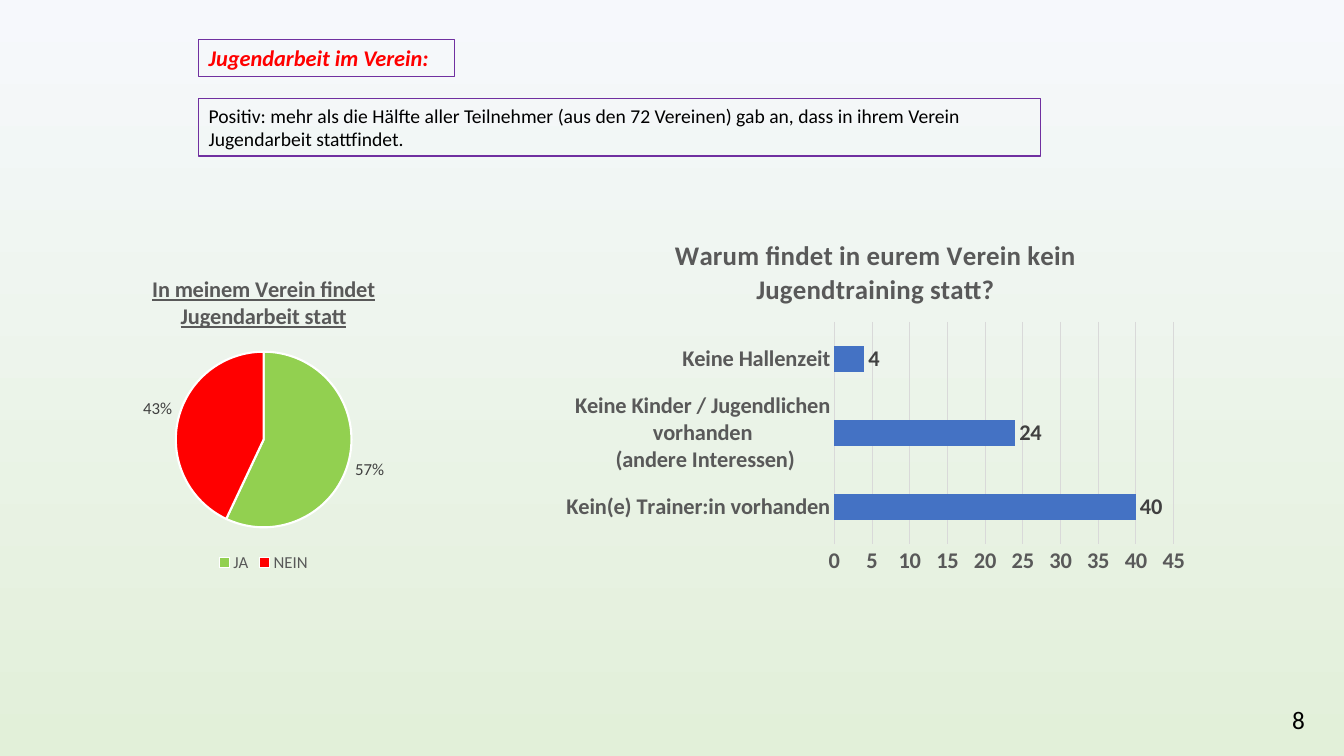
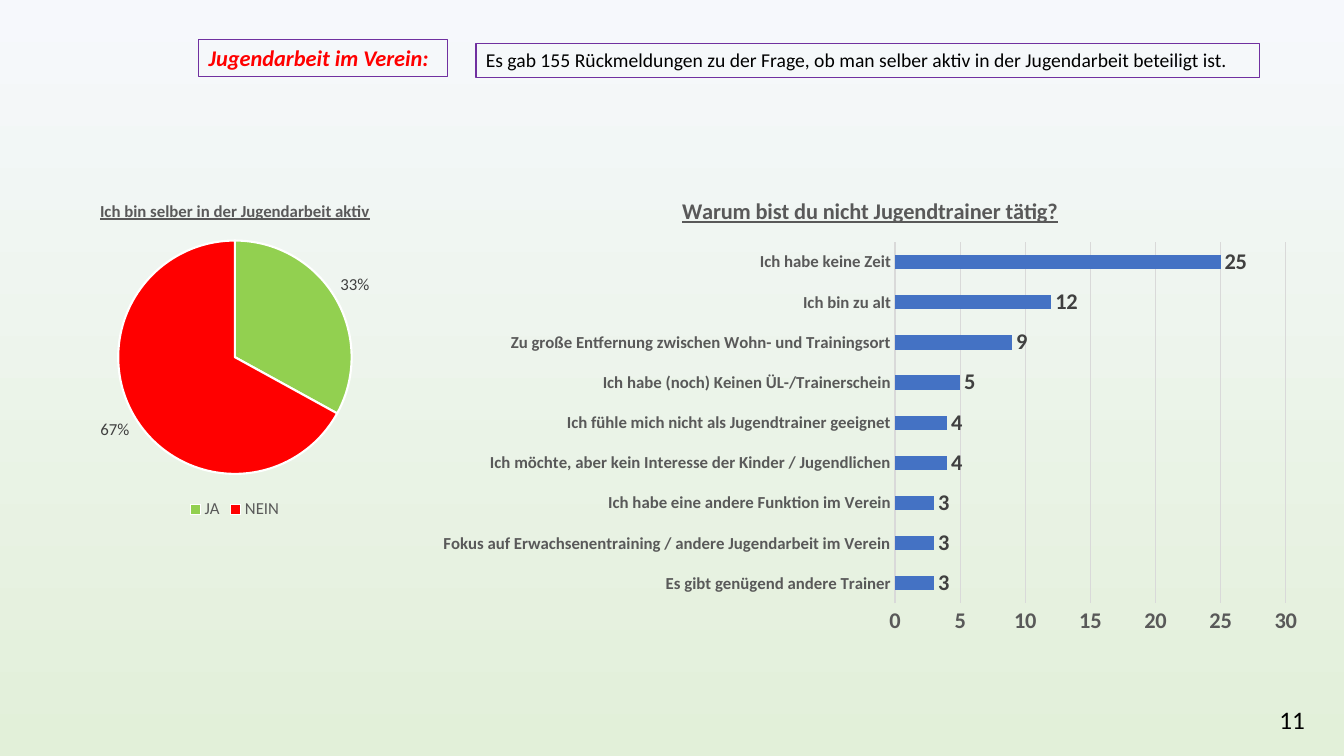
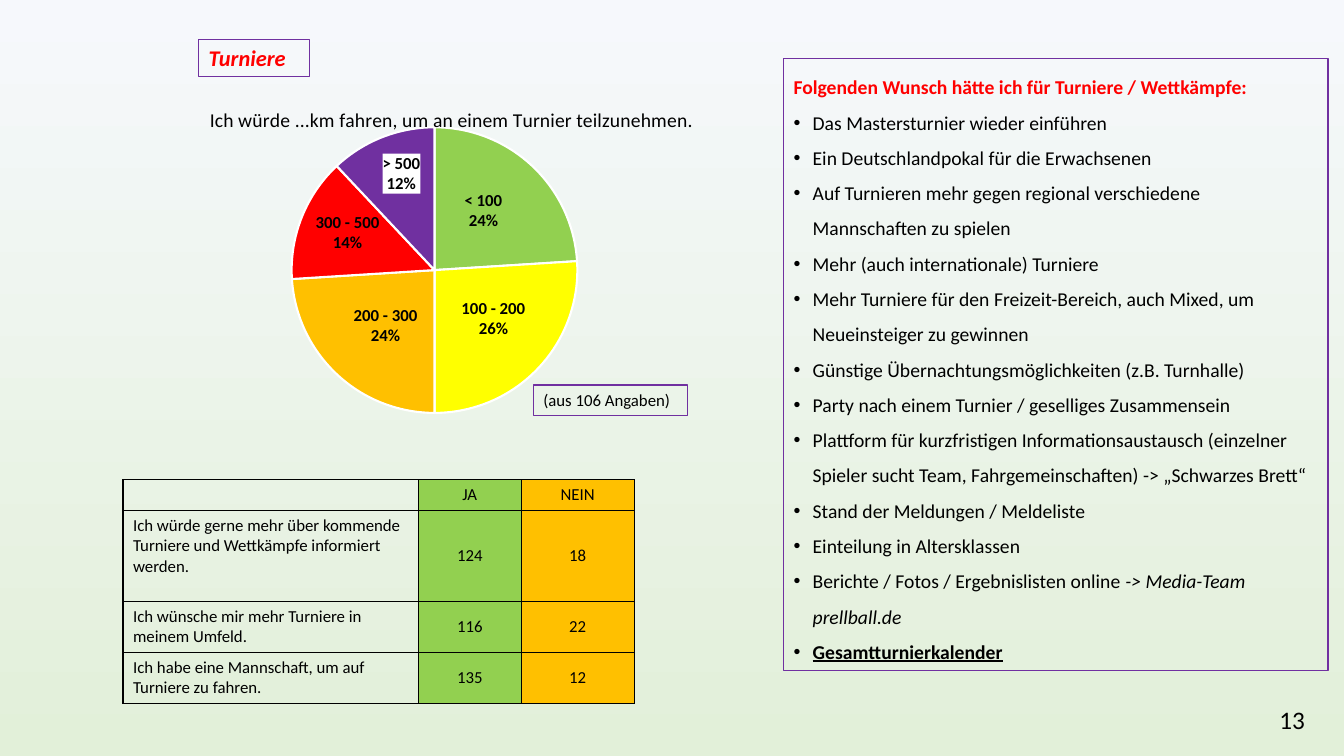
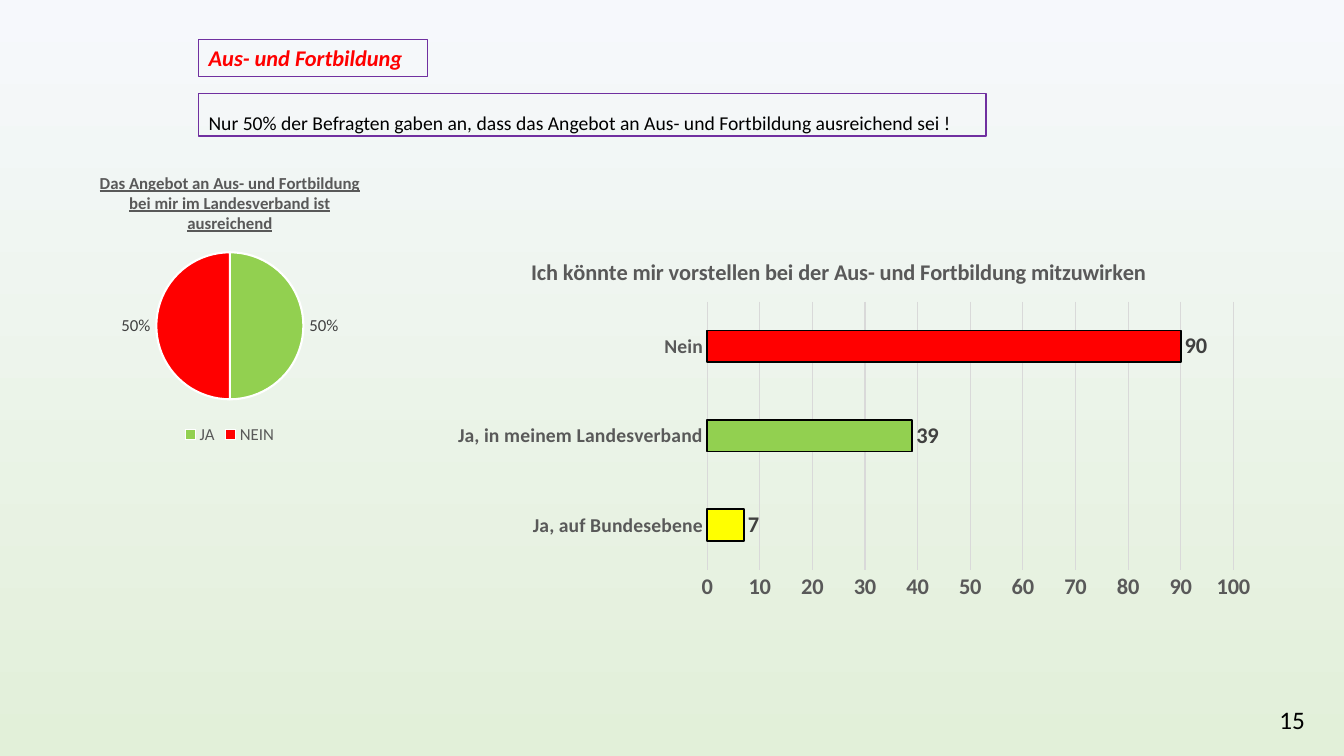
import copy

import lxml.etree
import pptx
import pptx.chart.data
import pptx.dml.color
import pptx.enum.chart
import pptx.enum.text
import pptx.oxml
import pptx.oxml.ns
import pptx.util

RGBColor = pptx.dml.color.RGBColor
Inches = pptx.util.Inches
Pt = pptx.util.Pt
qn = pptx.oxml.ns.qn

BLACK = RGBColor(0x00, 0x00, 0x00)
WHITE = RGBColor(0xFF, 0xFF, 0xFF)
RED = RGBColor(0xFF, 0x00, 0x00)
PURPLE = RGBColor(0x70, 0x30, 0xA0)
GREEN = RGBColor(0x92, 0xD0, 0x50)
YELLOW = RGBColor(0xFF, 0xFF, 0x00)
ORANGE = RGBColor(0xFF, 0xC0, 0x00)
BLUE = RGBColor(0x44, 0x72, 0xC4)
DARK_GREY = RGBColor(0x40, 0x40, 0x40)
GREY = RGBColor(0x59, 0x59, 0x59)
LIGHT_GREY = RGBColor(0xD9, 0xD9, 0xD9)
SKY = RGBColor(0xF6, 0xF8, 0xFC)
MEADOW = RGBColor(0xE2, 0xF0, 0xD9)
FONT = "Calibri"

LABEL_POSITION = pptx.enum.chart.XL_LABEL_POSITION
ALIGN = pptx.enum.text.PP_ALIGN
ANCHOR = pptx.enum.text.MSO_ANCHOR

WISHES = [
    "Das Mastersturnier wieder einführen",
    "Ein Deutschlandpokal für die Erwachsenen",
    "Auf Turnieren mehr gegen regional verschiedene Mannschaften zu spielen",
    "Mehr (auch internationale) Turniere",
    "Mehr Turniere für den Freizeit-Bereich, auch Mixed, um Neueinsteiger zu gewinnen",
    "Günstige Übernachtungsmöglichkeiten (z.B. Turnhalle)",
    "Party nach einem Turnier / geselliges Zusammensein",
    "Plattform für kurzfristigen Informationsaustausch (einzelner Spieler sucht Team, "
    "Fahrgemeinschaften) -> „Schwarzes Brett“",
    "Stand der Meldungen / Meldeliste",
    "Einteilung in Altersklassen",
]

SURVEY = [
    ("", "JA", "NEIN"),
    ("Ich würde gerne mehr über kommende Turniere und Wettkämpfe informiert werden.", "124", "18"),
    ("Ich wünsche mir mehr Turniere in meinem Umfeld.", "116", "22"),
    ("Ich habe eine Mannschaft, um auf Turniere zu fahren.", "135", "12"),
]

REASONS = {
    "Es gibt genügend andere Trainer": 3,
    "Fokus auf Erwachsenentraining / andere Jugendarbeit im Verein": 3,
    "Ich habe eine andere Funktion im Verein": 3,
    "Ich möchte, aber kein Interesse der Kinder / Jugendlichen": 4,
    "Ich fühle mich nicht als Jugendtrainer geeignet": 4,
    "Ich habe (noch) Keinen ÜL-/Trainerschein": 5,
    "Zu große Entfernung zwischen Wohn- und Trainingsort": 9,
    "Ich bin zu alt": 12,
    "Ich habe keine Zeit": 25,
}


def style_font(font, size=14, color=BLACK, bold=False, italic=False, underline=False):
    font.name = FONT
    font.size = Pt(size)
    font.color.rgb = color
    font.bold = bold
    font.italic = italic
    font.underline = underline


def write(para, text, **style):
    span = para.add_run()
    span.text = text
    style_font(span.font, **style)


def place(shape, box):
    shape.left, shape.top, shape.width, shape.height = map(Inches, box)


def frame_text(shape, anchor=ANCHOR.TOP):
    frame = shape.text_frame
    frame.word_wrap = True
    frame.auto_size = pptx.enum.text.MSO_AUTO_SIZE.NONE
    frame.vertical_anchor = anchor
    return frame.paragraphs[0]


def outline(shape):
    shape.line.color.rgb = PURPLE
    shape.line.width = Pt(1)


def set_heading(page, text, width):
    title = page.shapes.title
    place(title, (1.97, 0.39, width, 0.37))
    outline(title)
    para = frame_text(title)
    para.alignment = ALIGN.LEFT
    write(para, text, size=16, color=RED, bold=True, italic=True)


def add_note(page, box, text, size=14, line_spacing=1):
    note = page.shapes.add_textbox(*map(Inches, box))
    outline(note)
    para = frame_text(note)
    para.line_spacing = line_spacing
    write(para, text, size=size)


def add_page_number(page, number):
    box = page.shapes.add_textbox(Inches(10.04), Inches(6.94), Inches(3), Inches(0.4))
    para = frame_text(box, ANCHOR.MIDDLE)
    para.alignment = ALIGN.RIGHT
    write(para, str(number), size=18)


def start_page(deck, heading, width, number, layout=5):
    page = deck.slides.add_slide(deck.slide_layouts[layout])
    set_heading(page, heading, width)
    add_page_number(page, number)
    return page


def chart_xml(markup):
    return pptx.oxml.parse_xml(markup.replace(">", f" {pptx.oxml.ns.nsdecls('c', 'a')}>", 1))


def manual_layout(**values):
    parts = "".join(f'<c:{name} val="{value}"/>' for name, value in values.items())
    return chart_xml(f"<c:layout><c:manualLayout>{parts}</c:manualLayout></c:layout>")


def set_plot_box(chart, plot_box):
    area = chart._chartSpace.find(".//" + qn("c:plotArea"))
    for old in area.findall(qn("c:layout")):
        area.remove(old)
    left, top, width, height = plot_box
    area.insert(0, manual_layout(layoutTarget="inner", xMode="edge", yMode="edge",
                                 x=left, y=top, w=width, h=height))


def add_chart(page, box, kind, values, title, title_style, plot_box=None):
    data = pptx.chart.data.CategoryChartData()
    data.categories = list(values)
    data.add_series("Series 1", list(values.values()))
    chart = page.shapes.add_chart(kind, *map(Inches, box), data).chart
    style_font(chart.font, size=12)
    chart.has_title = True
    write(chart.chart_title.text_frame.paragraphs[0], title, **title_style)
    chart.chart_title.include_in_layout = False
    chart.has_legend = False
    clear = chart_xml("<c:spPr><a:noFill/><a:ln><a:noFill/></a:ln></c:spPr>")
    chart._chartSpace.find(qn("c:chart")).addnext(clear)
    chart._chartSpace.find(".//" + qn("c:plotArea")).append(copy.deepcopy(clear))
    if plot_box:
        set_plot_box(chart, plot_box)
    return chart


def color_points(series, colors, line_color, line_width):
    for index, color in enumerate(colors):
        look = series.points[index].format
        look.fill.solid()
        look.fill.fore_color.rgb = color
        look.line.color.rgb = line_color
        look.line.width = Pt(line_width)


def label_values(series, position, **style):
    labels = series.data_labels
    labels.show_value = True
    labels.position = position
    style_font(labels.font, **style)
    return labels


def add_pie(page, box, values, title, colors, title_style, plot_box=None):
    chart = add_chart(page, box, pptx.enum.chart.XL_CHART_TYPE.PIE, values, title,
                      title_style, plot_box)
    chart.plots[0].vary_by_categories = True
    color_points(chart.plots[0].series[0], colors, WHITE, 1.5)
    return chart


def add_yes_no_pie(page, box, yes, no, title, title_size=12):
    chart = add_pie(page, box, {"JA": yes, "NEIN": no}, title, [GREEN, RED],
                    dict(size=title_size, color=GREY, bold=True, underline=True))
    chart.has_legend = True
    chart.legend.position = pptx.enum.chart.XL_LEGEND_POSITION.BOTTOM
    chart.legend.include_in_layout = False
    style_font(chart.legend.font, size=12, color=GREY)
    labels = label_values(chart.plots[0].series[0], LABEL_POSITION.OUTSIDE_END,
                          size=12, color=DARK_GREY)
    labels.number_format = "0%"
    labels.number_format_is_linked = False


def shift_labels(label_list, shifts, filled):
    shared = [part for part in label_list if part.tag != qn("c:showLeaderLines")]
    for place_index, (index, (right, down)) in enumerate(shifts.items()):
        label = chart_xml(f'<c:dLbl><c:idx val="{index}"/></c:dLbl>')
        label.append(manual_layout(x=right, y=down))
        for part in shared:
            label.append(copy.deepcopy(part))
        if index == filled:
            label.find(qn("c:numFmt")).addnext(chart_xml(
                f'<c:spPr><a:solidFill><a:srgbClr val="{WHITE}"/></a:solidFill></c:spPr>'))
        label_list.insert(place_index, label)


def add_distance_pie(page, box):
    values = {"< 100": 0.24, "100 - 200": 0.26, "200 - 300": 0.24,
              "300 - 500": 0.14, "> 500": 0.12}
    chart = add_pie(page, box, values,
                    "Ich würde ...km fahren, um an einem Turnier teilzunehmen.",
                    [GREEN, YELLOW, ORANGE, RED, PURPLE], dict(size=14),
                    plot_box=(0.18, 0.1, 0.59, 0.76))
    series = chart.plots[0].series[0]
    labels = label_values(series, LABEL_POSITION.CENTER, size=12, bold=True)
    labels.show_category_name = True
    labels.number_format = "0%"
    labels.number_format_is_linked = False
    label_list = series._element.find(qn("c:dLbls"))
    separator = lxml.etree.Element(qn("c:separator"))
    separator.text = "\n"
    label_list.find(qn("c:showBubbleSize")).addnext(separator)
    shift_labels(label_list, {0: (0, -0.02), 1: (0.01, 0), 2: (0, 0.01),
                              3: (-0.03, -0.03), 4: (-0.01, -0.08)}, filled=4)


def add_bars(page, box, values, title, maximum, step, category_size=16, title_size=16,
             underline=False, colors=(), plot_box=None):
    chart = add_chart(page, box, pptx.enum.chart.XL_CHART_TYPE.BAR_CLUSTERED, values, title,
                      dict(size=title_size, color=GREY, bold=True, underline=underline),
                      plot_box)
    plot = chart.plots[0]
    plot.vary_by_categories = False
    plot.gap_width = 182
    series = plot.series[0]
    series.format.fill.solid()
    series.format.fill.fore_color.rgb = BLUE
    color_points(series, colors, BLACK, 1.25)
    label_values(series, LABEL_POSITION.OUTSIDE_END, size=16, color=DARK_GREY, bold=True)
    for axis, size in ((chart.category_axis, category_size), (chart.value_axis, 16)):
        axis.major_tick_mark = pptx.enum.chart.XL_TICK_MARK.NONE
        style_font(axis.tick_labels.font, size=size, color=GREY, bold=True)
    chart.value_axis.minimum_scale = 0
    chart.value_axis.maximum_scale = maximum
    chart.value_axis.major_unit = step
    chart.value_axis.has_major_gridlines = True
    chart.value_axis.format.line.fill.background()
    for line in (chart.category_axis.format.line, chart.value_axis.major_gridlines.format.line):
        line.color.rgb = LIGHT_GREY
        line.width = Pt(0.75)


def border_cell(cell):
    properties = cell._tc.get_or_add_tcPr()
    for index, side in enumerate(("lnL", "lnR", "lnT", "lnB")):
        properties.insert(index, chart_xml(
            f'<a:{side} w="12700"><a:solidFill><a:srgbClr val="{BLACK}"/></a:solidFill></a:{side}>'))


def add_survey_table(page, box):
    table = page.shapes.add_table(len(SURVEY), 3, *map(Inches, box)).table
    table.first_row = False
    table.horz_banding = False
    for column, width in zip(table.columns, (2.93, 1.02, 1.12)):
        column.width = Inches(width)
    for row, height in zip(table.rows, (0.3, 0.9, 0.5, 0.5)):
        row.height = Inches(height)
    for row, texts in zip(table.rows, SURVEY):
        for cell, text, color in zip(row.cells, texts, (None, GREEN, ORANGE)):
            para = cell.text_frame.paragraphs[0]
            if color is None:
                cell.fill.background()
            else:
                cell.fill.solid()
                cell.fill.fore_color.rgb = color
                cell.vertical_anchor = ANCHOR.MIDDLE
                para.alignment = ALIGN.CENTER
            if text:
                write(para, text, size=12)
            else:
                lxml.etree.SubElement(para._p, qn("a:endParaRPr"), sz="1200")
            border_cell(cell)


def add_wish(frame, *spans):
    para = frame.add_paragraph()
    properties = para._p.get_or_add_pPr()
    properties.set("marL", str(Inches(0.19)))
    properties.set("indent", str(-Inches(0.19)))
    lxml.etree.SubElement(properties, qn("a:buFont"), typeface="Arial")
    lxml.etree.SubElement(properties, qn("a:buChar"), char="•")
    para.line_spacing = 1.5
    para.space_before = Pt(0)
    for text, style in spans:
        write(para, text, **style)


def fill_wish_list(page, box):
    body = page.placeholders[1]
    place(body, box)
    outline(body)
    heading = frame_text(body)
    properties = heading._p.get_or_add_pPr()
    properties.set("marL", "0")
    properties.set("indent", "0")
    lxml.etree.SubElement(properties, qn("a:buNone"))
    heading.line_spacing = 1.5
    heading.space_before = Pt(0)
    write(heading, "Folgenden Wunsch hätte ich für Turniere / Wettkämpfe:", color=RED, bold=True)
    frame = body.text_frame
    for wish in WISHES:
        add_wish(frame, (wish, {}))
    add_wish(frame, ("Berichte / Fotos / Ergebnislisten online ", {}),
             ("-> Media-Team prellball.de", dict(italic=True)))
    add_wish(frame, ("Gesamtturnierkalender", dict(bold=True, underline=True)))


def build_club_page(deck):
    page = start_page(deck, "Jugendarbeit im Verein:", 2.54, 8)
    add_note(page, (1.97, 0.98, 8.35, 0.57),
             "Positiv: mehr als die Hälfte aller Teilnehmer (aus den 72 Vereinen) gab an, "
             "dass in ihrem Verein Jugendarbeit stattfindet.")
    add_yes_no_pie(page, (0.87, 2.56, 3.49, 3.16), 0.57, 0.43,
                   "In meinem Verein findet Jugendarbeit statt", title_size=16)
    add_bars(page, (5.49, 2.17, 6.39, 3.61),
             {"Kein(e) Trainer:in vorhanden": 40,
              "Keine Kinder / Jugendlichen vorhanden\n (andere Interessen)": 24,
              "Keine Hallenzeit": 4},
             "Warum findet in eurem Verein kein Jugendtraining statt?", 45, 5, title_size=19.2)


def build_trainer_page(deck):
    page = start_page(deck, "Jugendarbeit im Verein:", 2.47, 11)
    add_note(page, (4.72, 0.43, 7.77, 0.34),
             "Es gab 155 Rückmeldungen zu der Frage, ob man selber aktiv in der "
             "Jugendarbeit beteiligt ist.")
    add_yes_no_pie(page, (0.44, 1.83, 3.78, 3.36), 0.33, 0.67,
                   "Ich bin selber in der Jugendarbeit aktiv")
    add_bars(page, (4.22, 1.76, 8.82, 4.63), REASONS,
             "Warum bist du nicht Jugendtrainer tätig?", 30, 5, category_size=12, underline=True)


def build_tournament_page(deck):
    page = start_page(deck, "Turniere", 1.1, 13, layout=1)
    add_note(page, (5.29, 3.82, 1.53, 0.3), "(aus 106 Angaben)", size=12)
    add_survey_table(page, (1.22, 4.76, 5.07, 2.2))
    fill_wish_list(page, (7.77, 0.58, 5.4, 6.07))
    add_distance_pie(page, (1.08, 0.89, 6.8, 3.73))


def build_training_page(deck):
    page = start_page(deck, "Aus- und Fortbildung", 2.27, 15)
    add_note(page, (1.97, 0.93, 7.81, 0.42),
             "Nur 50% der Befragten gaben an, dass das Angebot an Aus- und Fortbildung "
             "ausreichend sei !", line_spacing=1.5)
    add_yes_no_pie(page, (0.54, 1.56, 3.48, 2.89), 0.5, 0.5,
                   "Das Angebot an Aus- und Fortbildung bei mir im Landesverband ist ausreichend")
    add_bars(page, (4.24, 2.38, 8.16, 3.6),
             {"Ja, auf Bundesebene": 7, "Ja, in meinem Landesverband": 39, "Nein": 90},
             "Ich könnte mir vorstellen bei der Aus- und Fortbildung mitzuwirken", 100, 10,
             category_size=14, colors=(YELLOW, GREEN, RED), plot_box=(0.34, 0.17, 0.64, 0.74))


def set_background(deck):
    fill = deck.slide_master.background.fill
    fill.gradient()
    fill.gradient_angle = 270
    for stop, position, color in zip(fill.gradient_stops, (0, 1), (SKY, MEADOW)):
        stop.position = position
        stop.color.rgb = color


def main():
    deck = pptx.Presentation()
    deck.slide_width = Inches(13.33)
    deck.slide_height = Inches(7.5)
    set_background(deck)
    build_club_page(deck)
    build_trainer_page(deck)
    build_tournament_page(deck)
    build_training_page(deck)
    deck.save("out.pptx")


if __name__ == "__main__":
    main()
